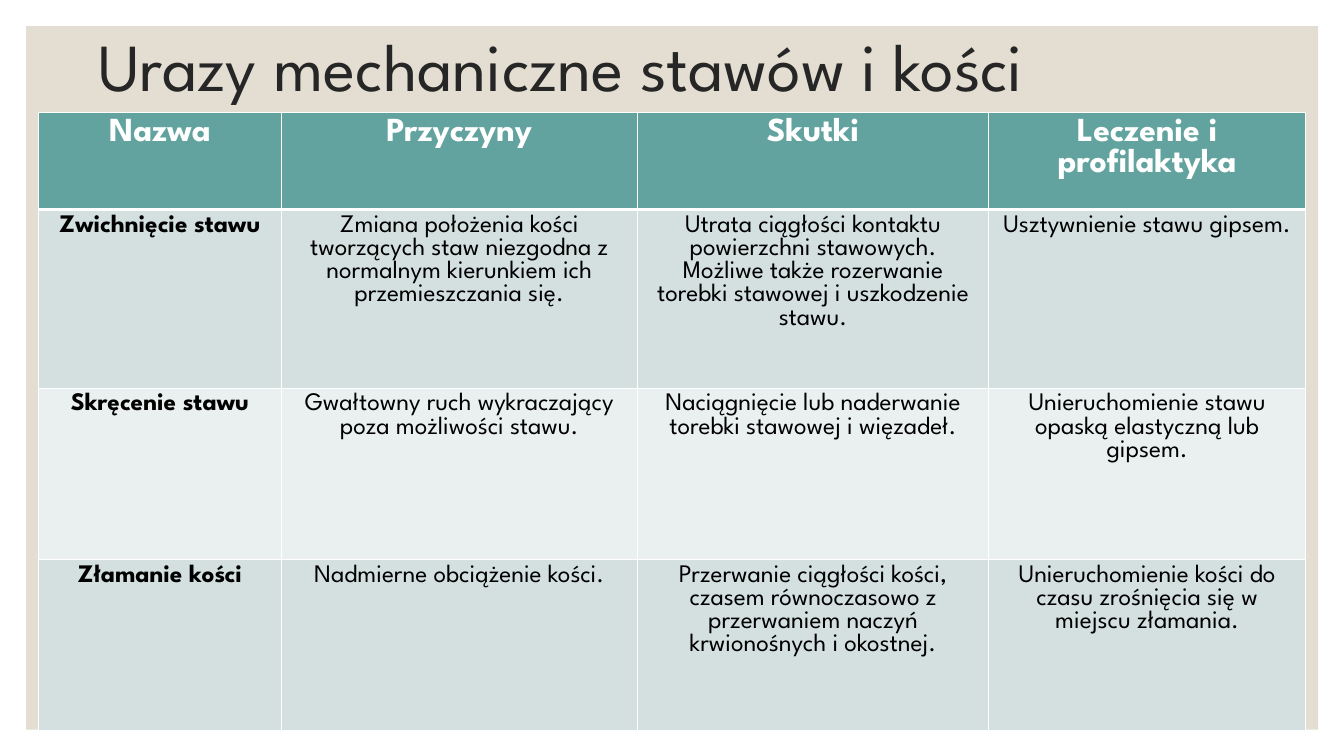
from dataclasses import dataclass

from lxml import etree
from pptx import Presentation
from pptx import util as u
from pptx.dml.color import RGBColor
from pptx.enum import shapes, text
from pptx.oxml import ns
from pptx.table import _Cell
from pptx.text.text import _Paragraph

FONT = "League Spartan"
COLORS = {
    "panel": "E3DED1",
    "title": "262626",
    "header": "62A39F",
    "band_dark": "D3E0DF",
    "band_light": "EAF0F0",
    "white": "FFFFFF",
    "black": "000000",
}
COLUMN_WIDTHS = (6.12, 8.97, 8.86, 7.98)


@dataclass(frozen=True)
class TableRow:
    height: float
    fill: str
    texts: tuple[str, str, str, str]
    size: int = 18
    color: str = "black"
    is_header: bool = False
    top_line: int = 1
    bottom_line: int = 1


ROWS = (
    TableRow(2.44, "header", ("Nazwa", "Przyczyny", "Skutki", "Leczenie i profilaktyka"),
             size=24, color="white", is_header=True, bottom_line=3),
    TableRow(4.5, "band_dark", (
        "Zwichnięcie stawu",
        "Zmiana położenia kości tworzących staw niezgodna z normalnym kierunkiem ich przemieszczania się.",
        "Utrata ciągłości kontaktu powierzchni stawowych. Możliwe także rozerwanie torebki stawowej "
        "i uszkodzenie stawu.",
        "Usztywnienie stawu gipsem.",
    ), top_line=3),
    TableRow(4.32, "band_light", (
        "Skręcenie stawu",
        "Gwałtowny ruch wykraczający poza możliwości stawu.",
        "Naciągnięcie lub naderwanie torebki stawowej i więzadeł.",
        "Unieruchomienie stawu opaską elastyczną lub gipsem.",
    )),
    TableRow(4.32, "band_dark", (
        "Złamanie kości",
        "Nadmierne obciążenie kości.",
        "Przerwanie ciągłości kości, czasem równoczasowo z przerwaniem naczyń krwionośnych i okostnej.",
        "Unieruchomienie kości do czasu zrośnięcia się w miejscu złamania.",
    )),
)


def rgb(name: str) -> RGBColor:
    return RGBColor.from_string(COLORS[name])


def add_run(paragraph: _Paragraph, content: str, size: int, color: str, bold: bool = False) -> None:
    run = paragraph.add_run()
    run.text = content
    run.font.name = FONT
    run.font.size = u.Pt(size)
    run.font.bold = bold
    run.font.color.rgb = rgb(color)


def add_borders(cell: _Cell, top: int, bottom: int) -> None:
    """Draw white cell borders; call before setting the fill, as the schema orders them."""
    properties = cell._tc.get_or_add_tcPr()
    for side, width in (("L", 1), ("R", 1), ("T", top), ("B", bottom)):
        line = etree.SubElement(properties, ns.qn(f"a:ln{side}"), w=str(u.Pt(width)))
        fill = etree.SubElement(line, ns.qn("a:solidFill"))
        etree.SubElement(fill, ns.qn("a:srgbClr"), val=COLORS["white"])


def fill_cell(cell: _Cell, content: str, row: TableRow, bold: bool) -> None:
    add_borders(cell, row.top_line, row.bottom_line)
    cell.fill.solid()
    cell.fill.fore_color.rgb = rgb(row.fill)
    paragraph = cell.text_frame.paragraphs[0]
    paragraph.alignment = text.PP_ALIGN.CENTER
    add_run(paragraph, content, row.size, row.color, bold)


def add_panel(slide) -> None:
    panel = slide.shapes.add_shape(
        shapes.MSO_SHAPE.RECTANGLE, u.Cm(0.66), u.Cm(0.66), u.Cm(32.56), u.Cm(17.73))
    panel.shadow.inherit = False
    panel.fill.solid()
    panel.fill.fore_color.rgb = rgb("panel")
    panel.line.fill.background()


def add_title(slide) -> None:
    frame = slide.shapes.add_textbox(u.Cm(2.23), u.Cm(-0.28), u.Cm(30.07), u.Cm(4.09)).text_frame
    frame.word_wrap = True
    frame.vertical_anchor = text.MSO_ANCHOR.MIDDLE
    paragraph = frame.paragraphs[0]
    paragraph.line_spacing = 0.9
    add_run(paragraph, "Urazy mechaniczne stawów i kości", 48, "title")


def add_injury_table(slide) -> None:
    table = slide.shapes.add_table(
        len(ROWS), len(COLUMN_WIDTHS), u.Cm(0.97), u.Cm(2.84),
        u.Cm(sum(COLUMN_WIDTHS)), u.Cm(sum(row.height for row in ROWS))).table
    for column, width in zip(table.columns, COLUMN_WIDTHS):
        column.width = u.Cm(width)
    for row_index, row in enumerate(ROWS):
        table.rows[row_index].height = u.Cm(row.height)
        for column_index, content in enumerate(row.texts):
            bold = row.is_header or column_index == 0
            fill_cell(table.cell(row_index, column_index), content, row, bold)


def main() -> None:
    presentation = Presentation()
    presentation.slide_width = u.Cm(33.87)
    presentation.slide_height = u.Cm(19.05)
    slide = presentation.slides.add_slide(presentation.slide_layouts[6])
    add_panel(slide)
    add_title(slide)
    add_injury_table(slide)
    presentation.save("out.pptx")


if __name__ == "__main__":
    main()
